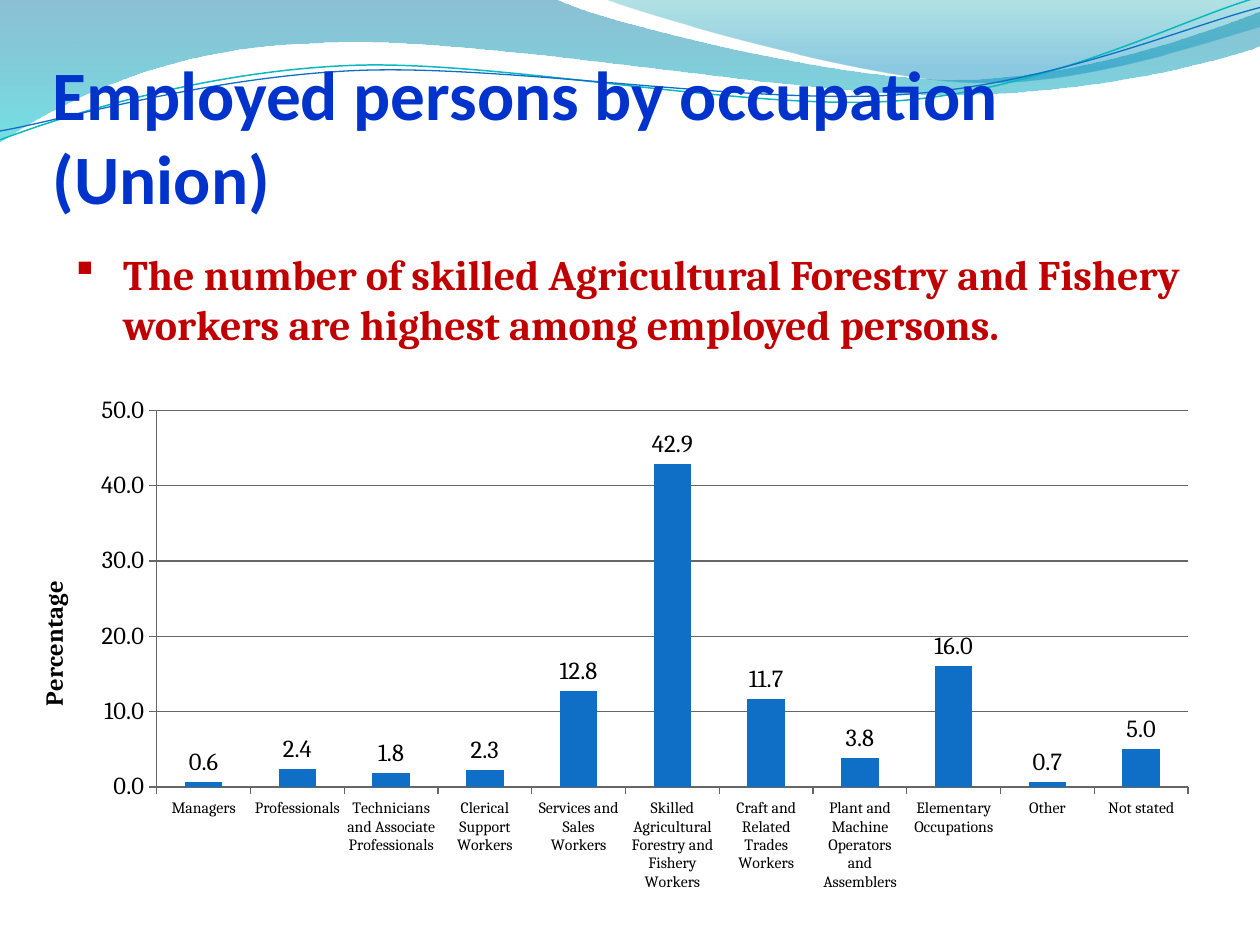
import math

import pptx
import pptx.chart.data
import pptx.dml.color
import pptx.enum.chart
import pptx.enum.text
import pptx.oxml
import pptx.oxml.ns
import pptx.util
from pptx.util import Inches

RGBColor = pptx.dml.color.RGBColor
qn = pptx.oxml.ns.qn
nsdecls = pptx.oxml.ns.nsdecls

BLUE = RGBColor(0x0F, 0x6F, 0xC6)
TEAL = RGBColor(0x0A, 0xB8, 0xBF)
TITLE_BLUE = RGBColor(0x00, 0x33, 0xCC)
RED = RGBColor(0xC0, 0x00, 0x00)
BLACK = RGBColor(0, 0, 0)
GRAY = RGBColor(0x66, 0x66, 0x66)
WAVE_TOP = RGBColor(0x00, 0x74, 0xA1)
WAVE_BOTTOM = RGBColor(0x00, 0xC6, 0xCF)
CREST_TOP = RGBColor(0x00, 0xA1, 0xA9)
CREST_BOTTOM = RGBColor(0x00, 0x8B, 0xBF)

TILT = 2.7

WAVE = [
    (0, 0), (4.4, -0.01),
    (4.76, 0.17, 6.64, 0.63, 7.58, 0.63), (8.53, 0.63, 9.58, 0.26, 10, 0.09),
    (10.01, 0.36),
    (9.83, 0.44, 8.7, 0.76, 7.46, 0.75), (6.22, 0.75, 3.82, 0.28, 2.57, 0.34),
    (1.29, 0.36, 0.46, 0.83, -0.01, 1.13),
]
CREST = [
    (4.79, -0.01),
    (5.09, 0.11, 6.82, 0.62, 7.69, 0.65), (8.56, 0.69, 9.61, 0.32, 10, 0.21),
    (10, 0),
]
TEAL_LINE = [
    (0, 1.11), (0.48, 0.93, 1.58, 0.57, 2.77, 0.52),
    (3.95, 0.47, 5.93, 0.89, 7.13, 0.8), (8.33, 0.71, 9.38, 0.15, 9.98, -0.02),
]
BLUE_LINE = [
    (0, 1.04), (0.47, 0.96, 1.64, 0.61, 2.83, 0.56),
    (4.03, 0.51, 5.97, 0.84, 7.17, 0.75), (8.36, 0.67, 9.41, 0.21, 10, 0.06),
]

OCCUPATIONS = [
    ("Managers", 0.6),
    ("Professionals", 2.4),
    ("Technicians and Associate Professionals", 1.8),
    ("Clerical Support Workers", 2.3),
    ("Services and Sales Workers", 12.8),
    ("Skilled Agricultural Forestry and Fishery Workers", 42.9),
    ("Craft and Related Trades Workers", 11.7),
    ("Plant and Machine Operators and Assemblers", 3.8),
    ("Elementary Occupations", 16.0),
    ("Other", 0.7),
    ("Not stated", 5.0),
]


def place(sp, box):
    sp.left, sp.top, sp.width, sp.height = (Inches(v) for v in box)


def set_font(font, name, size, color, bold=False):
    font.name, font.size, font.bold = name, pptx.util.Pt(size), bold
    font.color.rgb = color


def pairs(segment):
    return list(zip(segment[::2], segment[1::2]))


def level(segments, center):
    cx, cy = center
    cos, sin = math.cos(math.radians(TILT)), math.sin(math.radians(TILT))
    return [[v for x, y in pairs(segment)
             for v in (cx + (x - cx) * cos - (y - cy) * sin,
                       cy + (x - cx) * sin + (y - cy) * cos)]
            for segment in segments]


def add_outline(s, segments, close):
    anchors = [(Inches(seg[-2]), Inches(seg[-1])) for seg in segments]
    builder = s.shapes.build_freeform(*anchors[0])
    builder.add_line_segments(anchors[1:], close=close)
    sp = builder.convert_to_shape()
    sp.shadow.inherit = False
    lines = list(sp.element.iter(qn("a:lnTo")))
    for line, segment in zip(lines, segments[1:]):
        if len(segment) == 6:
            points = "".join(
                f'<a:pt x="{Inches(x) - sp.left}" y="{Inches(y) - sp.top}"/>'
                for x, y in pairs(segment))
            line.getparent().replace(line, pptx.oxml.parse_xml(
                f'<a:cubicBezTo {nsdecls("a")}>{points}</a:cubicBezTo>'))
    return sp


def add_band(s, segments, stops):
    sp = add_outline(s, segments, True)
    sp.line.fill.background()
    sp.fill.gradient()
    sp.fill.gradient_angle = 270
    for stop, (position, color, _) in zip(sp.fill.gradient_stops, stops):
        stop.position = position
        stop.color.rgb = color
    for clr, (_, _, opacity) in zip(sp.element.spPr.iter(qn("a:srgbClr")), stops):
        clr.append(pptx.oxml.parse_xml(
            f'<a:alpha {nsdecls("a")} val="{opacity * 1000}"/>'))


def add_curve(s, segments, center, color, width):
    sp = add_outline(s, level(segments, center), False)
    sp.rotation = -TILT
    sp.fill.background()
    sp.line.color.rgb = color
    sp.line.width = pptx.util.Pt(width)


def add_waves(s):
    add_band(s, WAVE, [(0, WAVE_TOP, 45), (1, WAVE_BOTTOM, 55)])
    add_band(s, CREST, [(0, CREST_TOP, 30), (0.8, CREST_BOTTOM, 45)])
    add_curve(s, TEAL_LINE, (4.99, 0.58), TEAL, 0.85)
    add_curve(s, BLUE_LINE, (5, 0.59), BLUE, 0.75)


def set_layout(element, index, **values):
    for old in element.findall(qn("c:layout")):
        element.remove(old)
    parts = "".join(f'<c:{tag} val="{value}"/>' for tag, value in values.items())
    element.insert(index, pptx.oxml.parse_xml(
        f'<c:layout {nsdecls("c")}><c:manualLayout>{parts}'
        '</c:manualLayout></c:layout>'))


def add_occupation_chart(s, box):
    data = pptx.chart.data.CategoryChartData(number_format="0.0")
    data.categories = [name for name, _ in OCCUPATIONS]
    data.add_series("Series 1", [value for _, value in OCCUPATIONS])
    chart = s.shapes.add_chart(
        pptx.enum.chart.XL_CHART_TYPE.COLUMN_CLUSTERED,
        *(Inches(v) for v in box), data).chart
    set_font(chart.font, "Cambria", 18, BLACK)
    chart.has_legend = False
    chart.has_title = False

    plot = chart.plots[0]
    plot.gap_width = 150
    plot.vary_by_categories = False
    fill = plot.series[0].format.fill
    fill.solid()
    fill.fore_color.rgb = BLUE
    plot.has_data_labels = True
    labels = plot.data_labels
    labels.show_value = True
    labels.number_format, labels.number_format_is_linked = "0.0", False
    labels.position = pptx.enum.chart.XL_LABEL_POSITION.OUTSIDE_END
    set_font(labels.font, "Cambria", 14, BLACK)

    value_axis = chart.value_axis
    for axis, size in ((chart.category_axis, 9), (value_axis, 14)):
        set_font(axis.tick_labels.font, "Cambria", size, BLACK)
        axis.major_tick_mark = pptx.enum.chart.XL_TICK_MARK.OUTSIDE
        axis.format.line.color.rgb = GRAY
    value_axis.minimum_scale, value_axis.maximum_scale = 0, 50
    value_axis.major_unit = 10
    value_axis.tick_labels.number_format = "0.0"
    value_axis.tick_labels.number_format_is_linked = False
    value_axis.major_gridlines.format.line.color.rgb = GRAY
    title = value_axis.axis_title
    p = title.text_frame.paragraphs[0]
    p.text = "Percentage"
    set_font(p.font, "Cambria", 14, BLACK, True)

    set_layout(title._element, 1, xMode="edge", yMode="edge", x=0.01, y=0.405)
    set_layout(chart._chartSpace.chart.plotArea, 0, layoutTarget="inner",
               xMode="edge", yMode="edge", x=0.114, y=0.113, w=0.869, h=0.664)


def add_title(s, box):
    sp = s.shapes.title
    place(sp, box)
    sp.element.getparent().append(sp.element)
    tf = sp.text_frame
    tf.auto_size = pptx.enum.text.MSO_AUTO_SIZE.NONE
    tf.vertical_anchor = pptx.enum.text.MSO_ANCHOR.BOTTOM
    tf.margin_left = tf.margin_right = tf.margin_bottom = 0
    tf.margin_top = Inches(0.05)
    p = tf.paragraphs[0]
    p.text = "Employed persons by occupation (Union)"
    p.alignment = pptx.enum.text.PP_ALIGN.LEFT
    set_font(p.font, "Calibri", 39.6, TITLE_BLUE, True)


def add_finding(s, box):
    tf = s.shapes.add_textbox(*(Inches(v) for v in box)).text_frame
    tf.word_wrap = True
    tf.auto_size = pptx.enum.text.MSO_AUTO_SIZE.SHAPE_TO_FIT_TEXT
    p = tf.paragraphs[0]
    p.text = ("The number of skilled Agricultural Forestry and Fishery "
              "workers are highest among employed persons.")
    set_font(p.font, "Cambria", 24, RED, True)
    pPr = p._p.get_or_add_pPr()
    pPr.set("marL", str(Inches(0.38)))
    pPr.set("indent", str(Inches(-0.38)))
    for i, bullet in enumerate(('buFont {} typeface="Wingdings"', 'buChar {} char="§"')):
        pPr.insert(i, pptx.oxml.parse_xml(f'<a:{bullet.format(nsdecls("a"))}/>'))


def main():
    prs = pptx.Presentation()
    prs.slide_width, prs.slide_height = Inches(10), Inches(7.5)
    s = prs.slides.add_slide(prs.slide_layouts[5])
    add_waves(s)
    add_occupation_chart(s, (0.17, 2.75, 9.42, 4.5))
    add_title(s, (0.42, 0.42, 9, 1.31))
    add_finding(s, (0.5, 1.92, 9.33, 0.91))
    prs.save("out.pptx")


if __name__ == "__main__":
    main()
